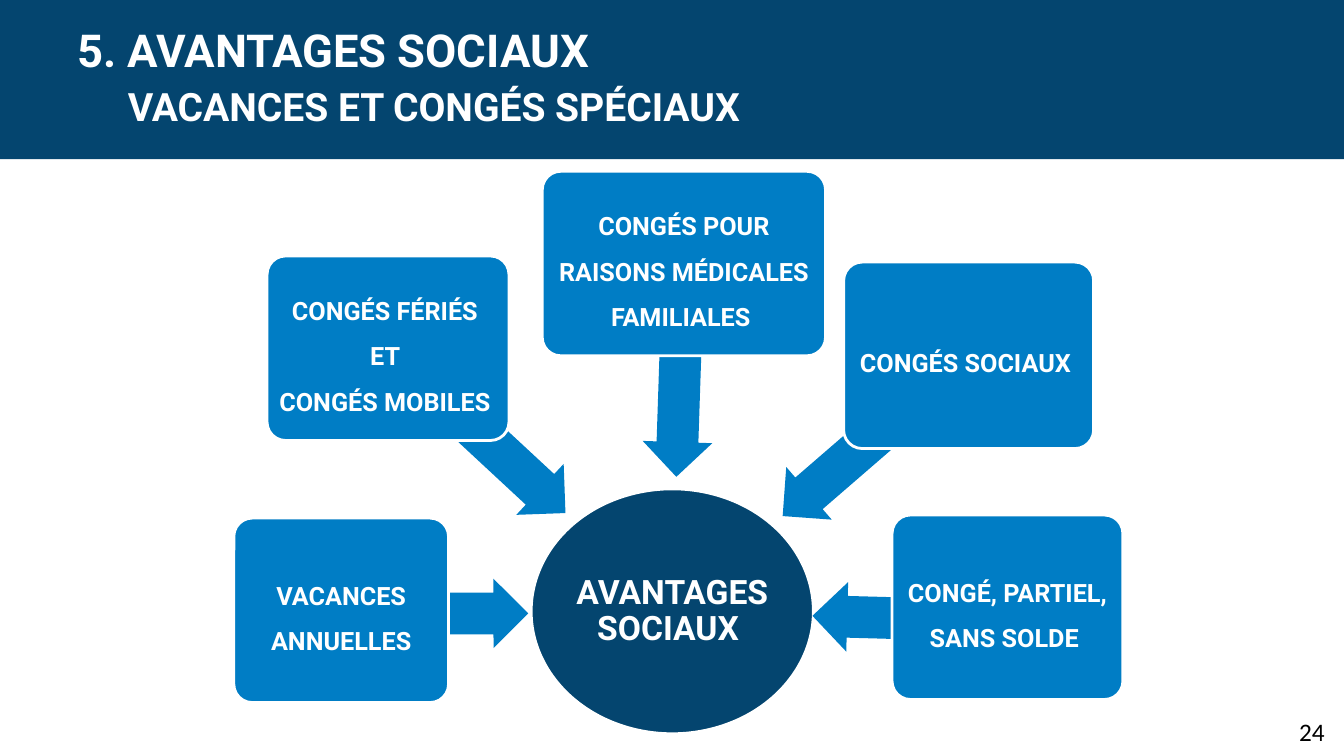
from math import atan2, degrees, hypot
from pptx import Presentation as Deck
from pptx.dml.color import RGBColor as Color
from pptx.enum.shapes import MSO_SHAPE as Shape
from pptx.enum.text import MSO_ANCHOR as Anchor, PP_ALIGN as Align
from pptx.util import Inches, Pt

NAVY = Color(0x04, 0x45, 0x6F)
BLUE = Color(0x00, 0x7D, 0xC5)
WHITE = Color(0xFF, 0xFF, 0xFF)
BLACK = Color(0, 0, 0)


class Board:
    """Draws styled shapes on a slide with a grid of 160 columns by 90 rows."""

    COLS, ROWS = 160, 90
    HEAD = {"name": "Roboto", "bold": True, "color": WHITE}
    PLAIN = {"name": "Calibri", "bold": False, "color": BLACK}
    THICK = 8.28

    def __init__(self, deck):
        self.slide = deck.slides.add_slide(deck.slide_layouts[6])
        self.col = deck.slide_width / self.COLS
        self.row = deck.slide_height / self.ROWS

    def place(self, left, top, width, height):
        return [round(size * unit) for size, unit in
                zip((left, top, width, height), (self.col, self.row) * 2)]

    def shape(self, kind, spot, fill, edge=False):
        item = self.slide.shapes.add_shape(kind, *self.place(*spot))
        item.shadow.inherit = False
        item.fill.solid()
        item.fill.fore_color.rgb = fill
        if edge:
            item.line.color.rgb = WHITE
            item.line.width = Pt(2)
        else:
            item.line.fill.background()
        return item

    def frame(self, item, side, down):
        form = {"word_wrap": True, "vertical_anchor": Anchor.MIDDLE,
                "margin_left": Inches(side), "margin_right": Inches(side),
                "margin_top": Inches(down), "margin_bottom": Inches(down)}
        for key, value in form.items():
            setattr(item.text_frame, key, value)
        return item.text_frame

    def label(self, para, text, size, form):
        run = para.add_run()
        run.text = text
        run.font.size = Pt(size)
        for key, value in form.items():
            if key == "color":
                run.font.color.rgb = value
            else:
                setattr(run.font, key, value)

    def fill(self, item, lines, size, space, inset):
        frame = self.frame(item, inset, inset)
        for spot, line in enumerate(lines):
            para = frame.add_paragraph() if spot else frame.paragraphs[0]
            para.alignment = Align.CENTER
            para.line_spacing = space
            self.label(para, line, size, self.HEAD)

    def hub(self, spot, line):
        item = self.shape(Shape.OVAL, spot, NAVY, True)
        self.fill(item, [line], 24, 0.9, 0.02)

    def card(self, spot, lines):
        item = self.shape(Shape.ROUNDED_RECTANGLE, spot, BLUE, True)
        item.adjustments[0] = 0.1
        self.fill(item, lines, 18, 1.5, 0.04)

    def arrow(self, start, tip):
        (left, top), (right, low) = start, tip
        span = hypot(right - left, low - top)
        spot = ((left + right - span) / 2, (top + low - self.THICK) / 2,
                span, self.THICK)
        item = self.shape(Shape.LEFT_ARROW, spot, BLUE)
        item.adjustments[0], item.adjustments[1] = 0.6, 0.5
        item.rotation = degrees(atan2(top - low, left - right))

    def text(self, spot):
        box = self.slide.shapes.add_textbox(*self.place(*spot))
        return self.frame(box, 0.1, 0.05).paragraphs[0]

    def title(self, spot, first, second):
        para = self.text(spot)
        self.label(para, first, 32.4, self.HEAD)
        para.add_line_break()
        self.label(para, "\t", 32.4, self.HEAD)
        self.label(para, second, 27.9, self.HEAD)

    def page(self, spot, text):
        para = self.text(spot)
        para.alignment = Align.RIGHT
        self.label(para, text, 18, self.PLAIN)


LEAVES = [
    ((27.84, 61.68, 25.56, 21.96), (41.52, 73.08), (62.88, 73.02),
     ["VACANCES ANNUELLES"]),
    ((31.8, 30.48, 28.8, 21.96), (46.2, 41.46), (67.32, 61.08),
     ["CONGÉS FÉRIÉS ", "ET ", "CONGÉS MOBILES "]),
    ((64.56, 20.4, 33.72, 21.96), (81.36, 31.38), (80.52, 56.76),
     ["CONGÉS POUR RAISONS MÉDICALES FAMILIALES "]),
    ((100.44, 31.2, 29.76, 22.2), (115.3, 42.3), (93.18, 61.44),
     ["CONGÉS SOCIAUX "]),
    ((106.2, 61.32, 27.48, 21.96), (118.68, 73.92), (96.72, 73.32),
     ["CONGÉ, PARTIEL,", "SANS SOLDE "]),
]


def main():
    deck = Deck()
    deck.slide_width, deck.slide_height = Inches(13.33), Inches(7.5)
    board = Board(deck)
    board.shape(Shape.RECTANGLE, (0, 0, board.COLS, 18.96), NAVY)
    board.page((121.56, 84.72, 37.32, 4.8), "24")
    board.hub((63.24, 58.2, 33.6, 29.16), "AVANTAGES SOCIAUX ")
    for spot, start, tip, lines in LEAVES:
        board.arrow(start, tip)
        board.card(spot, lines)
    board.title((8.04, 1.56, 144, 15), "5. AVANTAGES SOCIAUX",
                "VACANCES ET CONGÉS SPÉCIAUX")
    deck.save("out.pptx")


if __name__ == "__main__":
    main()
